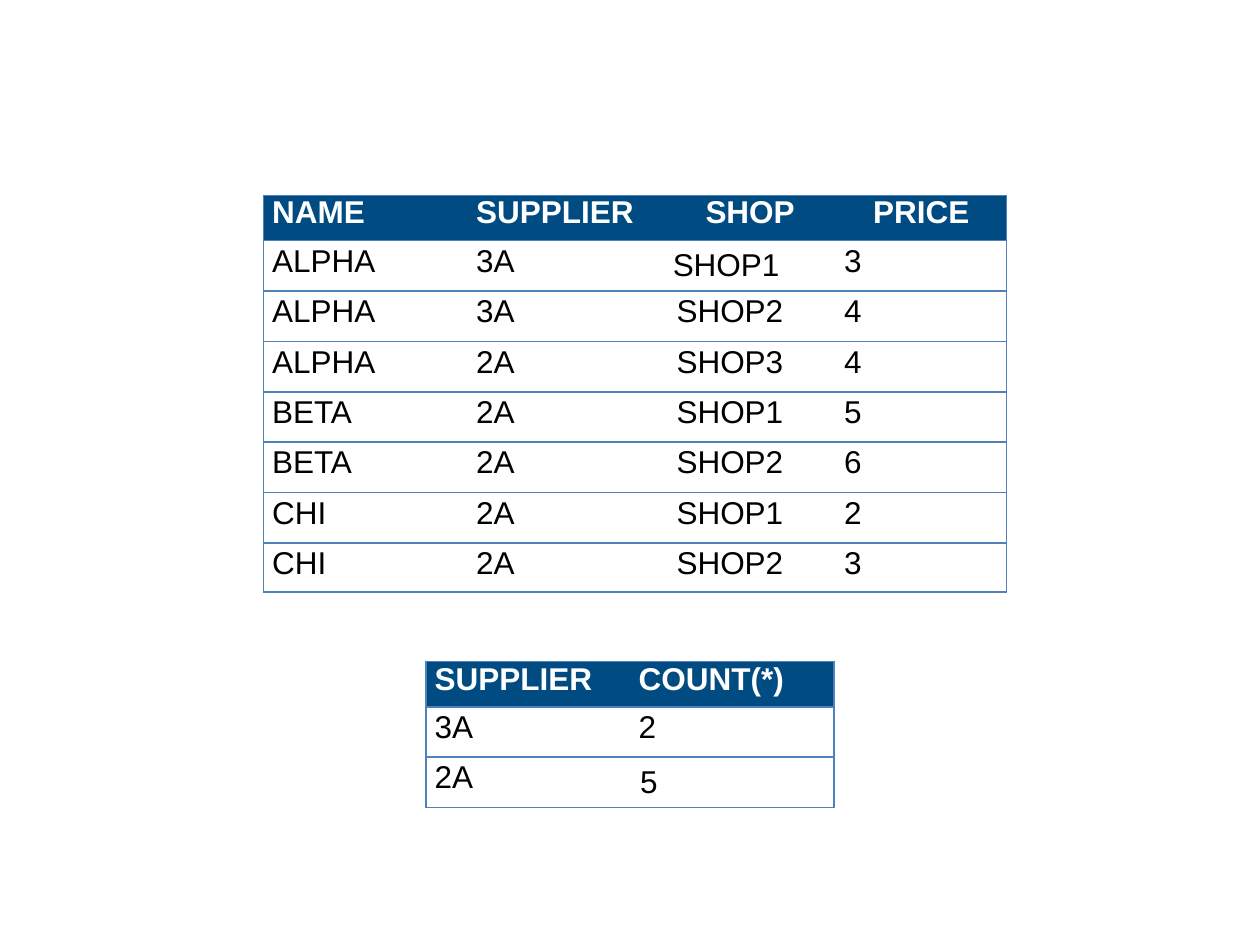
from dataclasses import dataclass

from lxml import etree
from pptx import Presentation
from pptx import util as u
from pptx.dml.color import RGBColor
from pptx.enum import text
from pptx.oxml.ns import qn

NAVY, BLUE, WHITE, BLACK = "004B82", "4F81BD", "FFFFFF", "000000"


@dataclass
class Grid:
    left: float
    top: float
    widths: list[float]
    heights: list[float]
    header_indents: list[float]
    body_indents: list[float]
    rows: list[list[str]]
    loose_cell: tuple[int, int]  # the one cell with single line spacing
    loose_indent: float


def color(value: str) -> RGBColor:
    return RGBColor.from_string(value)


def set_borders(cell, visible: set[str]) -> None:
    """Draw the named sides (L, R, T, B) and hide the others."""
    properties = cell._tc.get_or_add_tcPr()
    for side in "LRTB":
        line = etree.SubElement(properties, qn(f"a:ln{side}"), w=str(u.Pt(1)))
        if side in visible:
            fill = etree.SubElement(line, qn("a:solidFill"))
            etree.SubElement(fill, qn("a:srgbClr"), val=BLUE)
        else:
            etree.SubElement(line, qn("a:noFill"))


def write_cell(cell, content: str, indent: float, spacing: float | None, header: bool) -> None:
    cell.fill.solid()
    cell.fill.fore_color.rgb = color(NAVY if header else WHITE)
    cell.vertical_anchor = text.MSO_ANCHOR.MIDDLE
    cell.margin_left = cell.margin_right = u.Inches(0.01)
    cell.margin_top = cell.margin_bottom = 0
    paragraph = cell.text_frame.paragraphs[0]
    properties = paragraph._p.get_or_add_pPr()
    properties.set("marL", str(u.Inches(indent)))
    properties.set("indent", "0")
    if spacing:
        paragraph.line_spacing = u.Pt(spacing)
    run = paragraph.add_run()
    run.text = content
    run.font.name = "Arial"
    run.font.size = u.Pt(18)
    run.font.bold = header
    run.font.color.rgb = color(WHITE if header else BLACK)


def draw_grid(slide, grid: Grid) -> None:
    table = slide.shapes.add_table(
        len(grid.rows), len(grid.widths), u.Inches(grid.left), u.Inches(grid.top),
        u.Inches(sum(grid.widths)), u.Inches(sum(grid.heights))).table
    for column, width in zip(table.columns, grid.widths):
        column.width = u.Inches(width)
    for row, height in zip(table.rows, grid.heights):
        row.height = u.Inches(height)
    last_column = len(grid.widths) - 1
    for r, values in enumerate(grid.rows):
        header = r == 0
        indents = grid.header_indents if header else grid.body_indents
        for c, value in enumerate(values):
            cell = table.cell(r, c)
            sides = {"T", "B"}
            if c == 0:
                sides.add("L")
            if c == last_column:
                sides.add("R")
            set_borders(cell, sides)
            if (r, c) == grid.loose_cell:
                write_cell(cell, value, grid.loose_indent, None, header)
            else:
                write_cell(cell, value, indents[c], 14.5 if header else 15, header)


PRICES = Grid(
    left=2.09, top=1.55,
    widths=[1.62, 1.62, 1.33, 1.33],
    heights=[0.36] + [0.4] * 6 + [0.39],
    header_indents=[0.06, 0.06, 0.26, 0.26],
    body_indents=[0.06, 0.06, 0.03, 0.03],
    rows=[
        ["NAME", "SUPPLIER", "SHOP", "PRICE"],
        ["ALPHA", "3A", "SHOP1", "3"],
        ["ALPHA", "3A", "SHOP2", "4"],
        ["ALPHA", "2A", "SHOP3", "4"],
        ["BETA", "2A", "SHOP1", "5"],
        ["BETA", "2A", "SHOP2", "6"],
        ["CHI", "2A", "SHOP1", "2"],
        ["CHI", "2A", "SHOP2", "3"],
    ],
    loose_cell=(1, 2), loose_indent=0)

SUPPLIER_COUNTS = Grid(
    left=3.38, top=5.25,
    widths=[1.62, 1.62],
    heights=[0.36, 0.4, 0.4],
    header_indents=[0.06, 0.06],
    body_indents=[0.06, 0.06],
    rows=[["SUPPLIER", "COUNT(*)"], ["3A", "2"], ["2A", "5"]],
    loose_cell=(2, 1), loose_indent=0.07)


def main() -> None:
    presentation = Presentation()
    presentation.slide_width = u.Inches(10)
    presentation.slide_height = u.Inches(7.5)
    slide = presentation.slides.add_slide(presentation.slide_layouts[6])
    for grid in (PRICES, SUPPLIER_COUNTS):
        draw_grid(slide, grid)
    presentation.save("out.pptx")


if __name__ == "__main__":
    main()
